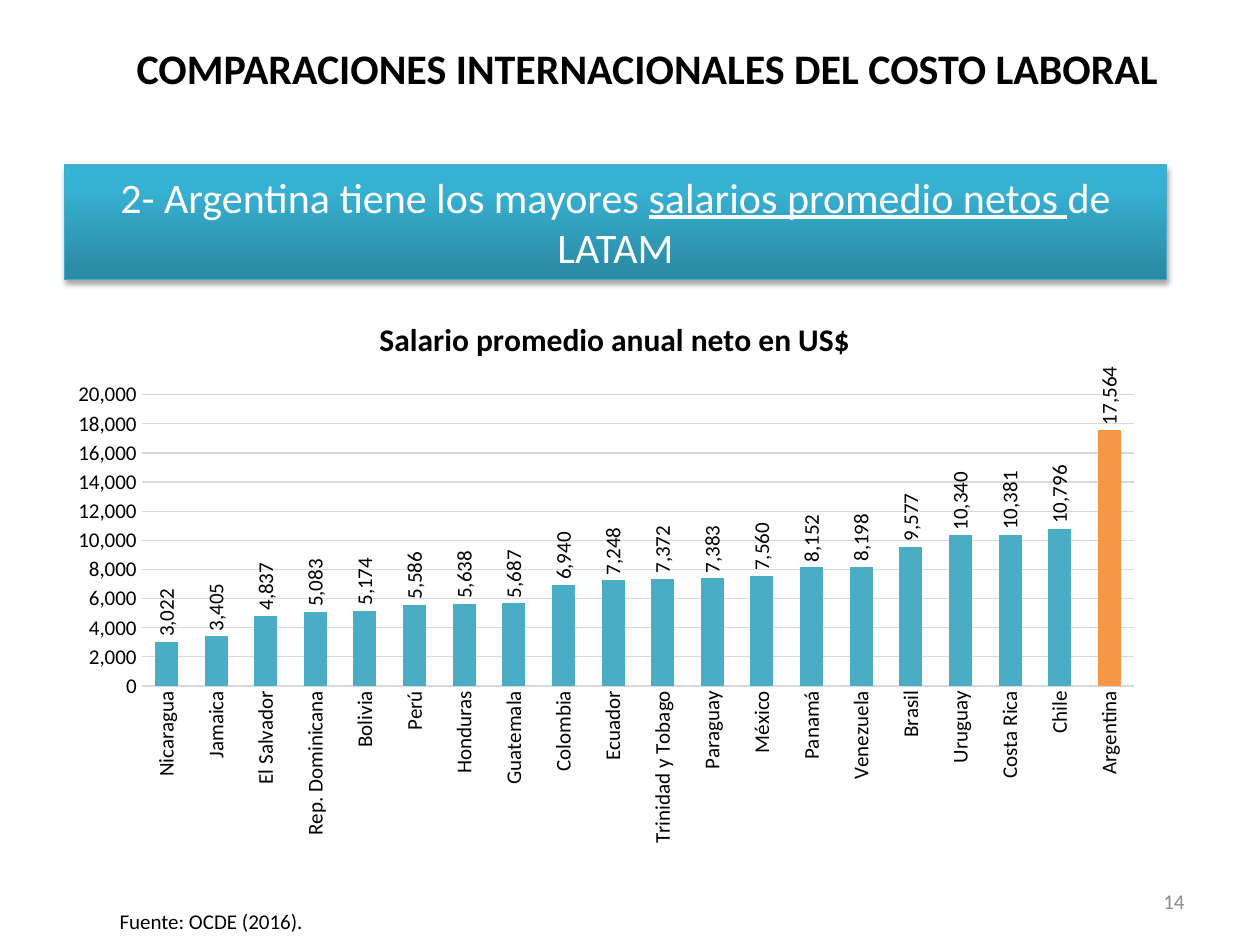
from pptx import Presentation
from pptx import util as u
from pptx.chart import data as chart_data
from pptx.dml import color
from pptx.enum import chart as ch, shapes, text
from pptx.oxml import parse_xml
from pptx.oxml import ns

FONT = "Calibri"
WAGES = {
    "Nicaragua": 3022, "Jamaica": 3405, "El Salvador": 4837,
    "Rep. Dominicana": 5083, "Bolivia": 5174, "Perú": 5586,
    "Honduras": 5638, "Guatemala": 5687, "Colombia": 6940,
    "Ecuador": 7248, "Trinidad y Tobago": 7372, "Paraguay": 7383,
    "México": 7560, "Panamá": 8152, "Venezuela": 8198, "Brasil": 9577,
    "Uruguay": 10340, "Costa Rica": 10381, "Chile": 10796,
    "Argentina": 17564,
}
GROW = text.MSO_AUTO_SIZE.SHAPE_TO_FIT_TEXT
CENTER, RIGHT = text.PP_ALIGN.CENTER, text.PP_ALIGN.RIGHT


def rgb(value):
    return color.RGBColor.from_string(value)


def apply(target, formats):
    for name, value in formats.items():
        setattr(target, name, value)


def style_font(font, size, ink="000000", **extra):
    apply(font, {"name": FONT, "size": u.Pt(size), **extra})
    font.color.rgb = rgb(ink)


def style_line(line, ink):
    line.color.rgb = rgb(ink)
    line.width = u.Pt(0.75)


def drawing(tag, body):
    return parse_xml(f"<{tag} {ns.nsdecls('a', 'c')}>{body}</{tag}>")


def fill_text(shape, runs, size, ink="000000", align=CENTER, bold=False, **frame_formats):
    frame = shape.text_frame
    apply(frame, {"word_wrap": True, **frame_formats})
    paragraph = frame.paragraphs[0]
    paragraph.alignment = align
    for wording, underlined in runs:
        run = paragraph.add_run()
        run.text = wording
        style_font(run.font, size, ink, bold=bold, underline=underlined)


def add_label(slide, box, wording, size, **formats):
    label = slide.shapes.add_textbox(*map(u.Pt, box))
    fill_text(label, [(wording, False)], size, **formats)


def add_banner(slide, box, runs):
    banner = slide.shapes.add_shape(shapes.MSO_SHAPE.RECTANGLE, *map(u.Pt, box))
    stops = "".join(
        f'<a:gs pos="{share * 1000}"><a:srgbClr val="{ink}"/></a:gs>'
        for share, ink in ((0, "2A88A2"), (80, "37B1D2"), (100, "34B4D6")))
    banner.fill.gradient()
    banner.fill.gradient_angle = 90
    old_stops = banner._element.spPr.find(".//" + ns.qn("a:gsLst"))
    old_stops.getparent().replace(old_stops, drawing("a:gsLst", stops))
    style_line(banner.line, "46AAC5")
    banner._element.spPr.append(drawing(
        "a:effectLst",
        f'<a:outerShdw blurRad="{u.Pt(3.1)}" dist="{u.Pt(1.8)}" dir="5400000" rotWithShape="0">'
        '<a:srgbClr val="000000"><a:alpha val="35000"/></a:srgbClr></a:outerShdw>'))
    fill_text(banner, runs, 24, "FFFFFF", auto_size=GROW,
              vertical_anchor=text.MSO_ANCHOR.TOP)


def turn_upright(element):
    body = element.find(".//" + ns.qn("a:bodyPr"))
    body.set("rot", "-5400000")
    body.set("vert", "horz")


def style_axes(chart):
    countries, dollars = chart.category_axis, chart.value_axis
    for axis in (countries, dollars):
        style_font(axis.tick_labels.font, 12)
        apply(axis, {"major_tick_mark": ch.XL_TICK_MARK.NONE,
                     "minor_tick_mark": ch.XL_TICK_MARK.NONE})
    style_line(countries.format.line, "D9D9D9")
    turn_upright(countries._element)
    apply(dollars, {"minimum_scale": 0, "maximum_scale": 20000,
                    "major_unit": 2000, "has_major_gridlines": True})
    apply(dollars.tick_labels, {"number_format": "#,##0", "number_format_is_linked": False})
    dollars.format.line.fill.background()
    style_line(dollars.major_gridlines.format.line, "D9D9D9")


def style_bars(plot):
    apply(plot, {"gap_width": 116, "overlap": -27,
                 "vary_by_categories": False, "has_data_labels": True})
    wages = plot.series[0]
    argentina = wages.points[list(WAGES).index("Argentina")]
    for bar, ink in ((wages, "4BACC6"), (argentina, "F79646")):
        bar.format.fill.solid()
        bar.format.fill.fore_color.rgb = rgb(ink)
    labels = plot.data_labels
    apply(labels, {"show_value": True, "number_format": "#,##0",
                   "number_format_is_linked": False,
                   "position": ch.XL_LABEL_POSITION.OUTSIDE_END})
    style_font(labels.font, 12)
    turn_upright(labels._element)


def place_plot(chart, x, y, w, h):
    sizes = "".join(f'<c:{name} val="{value}"/>' for name, value in
                    (("x", x), ("y", y), ("w", w), ("h", h)))
    layout = drawing(
        "c:layout",
        '<c:manualLayout><c:layoutTarget val="inner"/><c:xMode val="edge"/>'
        f'<c:yMode val="edge"/>{sizes}</c:manualLayout>')
    area = chart._chartSpace.chart.plotArea
    for old_layout in area.findall(ns.qn("c:layout")):
        area.remove(old_layout)
    area.insert(0, layout)


def add_wage_chart(slide, box, title):
    wages = chart_data.CategoryChartData(number_format="#,##0")
    wages.categories = list(WAGES)
    wages.add_series("Series 1", list(WAGES.values()))
    chart = slide.shapes.add_chart(
        ch.XL_CHART_TYPE.COLUMN_CLUSTERED, *map(u.Pt, box), wages).chart
    style_font(chart.font, 10)
    apply(chart, {"has_legend": False, "has_title": True})
    heading = chart.chart_title.text_frame.paragraphs[0].add_run()
    heading.text = title
    style_font(heading.font, 18, bold=True)
    chart.chart_title.include_in_layout = False
    style_axes(chart)
    style_bars(chart.plots[0])
    place_plot(chart, 0.09, 0.17, 0.86, 0.49)
    chart._chartSpace.chart.addnext(drawing(
        "c:spPr", '<a:solidFill><a:srgbClr val="FFFFFF"/></a:solidFill>'
                  '<a:ln><a:noFill/></a:ln>'))


def main():
    deck = Presentation()
    apply(deck, {"slide_width": u.Pt(720), "slide_height": u.Pt(540)})
    slide = deck.slides.add_slide(deck.slide_layouts[6])
    add_label(slide, (516, 500.5, 168, 28.75), "14", 12, ink="8C8C8C",
              align=RIGHT, vertical_anchor=text.MSO_ANCHOR.MIDDLE)
    add_label(slide, (25.2, 20.9, 694.8, 36),
              "COMPARACIONES INTERNACIONALES DEL COSTO LABORAL ", 24,
              bold=True, auto_size=GROW)
    add_label(slide, (59.8, 515.5, 121.7, 21.6), "Fuente: OCDE (2016).", 12,
              word_wrap=False, auto_size=GROW)
    add_banner(slide, (36.7, 94.3, 630, 65.5), [
        ("2- Argentina tiene los mayores ", False),
        ("salarios promedio netos ", True),
        ("de LATAM", False)])
    add_wage_chart(slide, (21.6, 167.8, 659.5, 339.8),
                   "Salario promedio anual neto en US$")
    deck.save("out.pptx")


if __name__ == "__main__":
    main()
